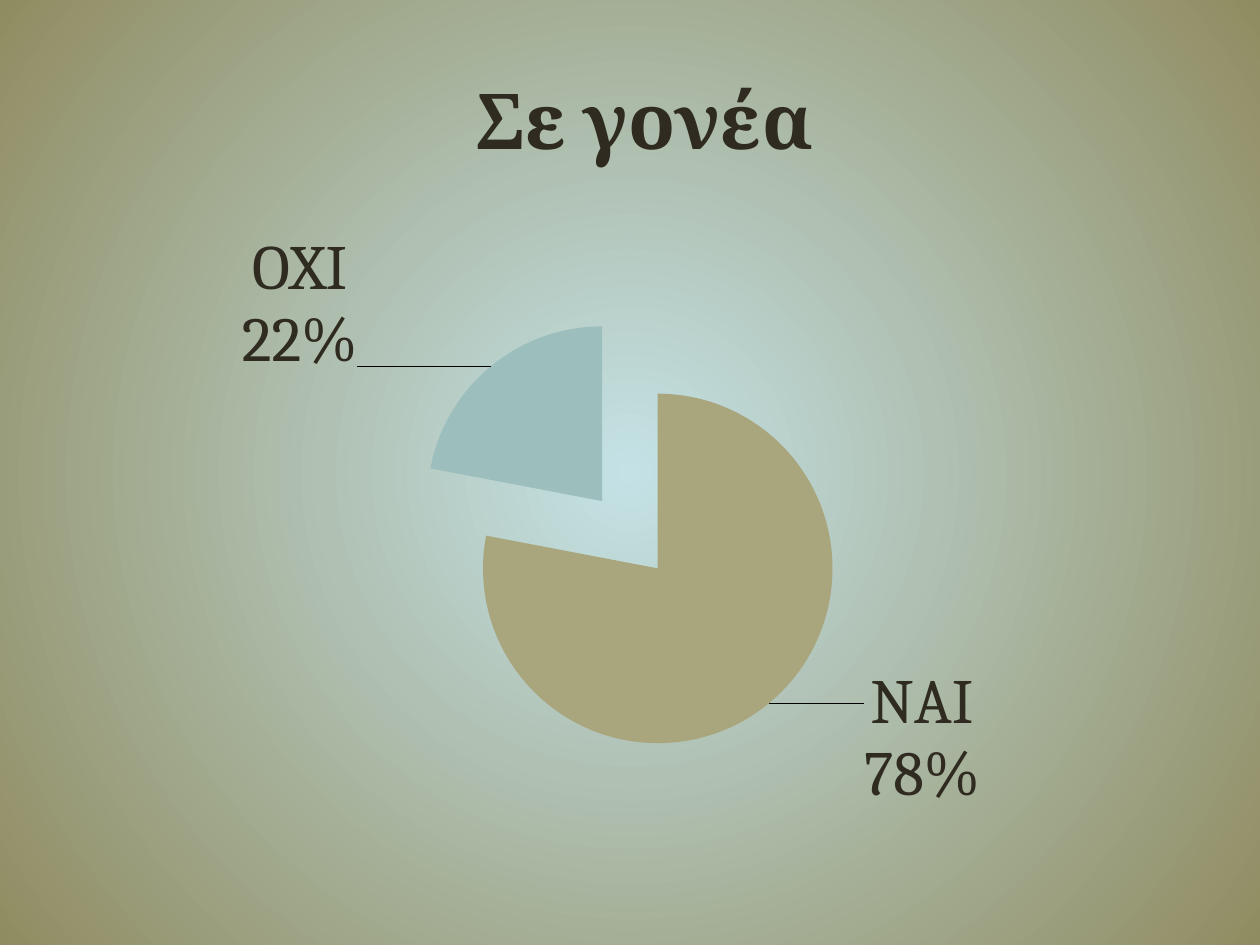
from lxml import etree
from pptx import Presentation
from pptx.chart.data import CategoryChartData
from pptx.dml.color import RGBColor
from pptx.enum.chart import XL_CHART_TYPE, XL_LABEL_POSITION
from pptx.oxml import parse_xml
from pptx.oxml.ns import nsdecls, qn
from pptx.util import Inches, Pt

# Content
TITLE = "Σε γονέα"
COLORS = {"text": "2F2B20", "center": "C4E2E6", "edge": "908C61",
          "yes": "A9A57C", "no": "9CBEBD"}
# answer, percent, colour, label shift as a share of the chart size
ANSWERS = [("NAI", 78, "yes", (0.07, -0.05)),
           ("OXI", 22, "no", (-0.1, 0.02))]
TITLE_AT = {"x": 0.37, "y": 0}
PIE_AREA = {"x": 0.33, "y": 0.31, "w": 0.34, "h": 0.53}
EXPLOSION = 25


def set_font(font, size, name="Cambria", bold=False):
    font.size, font.name, font.bold = Pt(size), name, bold
    font.color.rgb = RGBColor.from_string(COLORS["text"])


def layout(values, inner=False, edge=False):
    target = '<c:layoutTarget val="inner"/>' if inner else ""
    modes = '<c:xMode val="edge"/><c:yMode val="edge"/>' if edge else ""
    parts = "".join(f'<c:{k} val="{v}"/>' for k, v in values.items())
    return parse_xml(f'<c:layout {nsdecls("c")}><c:manualLayout>{target}{modes}'
                     f'{parts}</c:manualLayout></c:layout>')


def show_category_and_percent(element):
    for tag, val in (("showVal", 0), ("showLegendKey", 0), ("showCatName", 1),
                     ("showSerName", 0), ("showPercent", 1)):
        element.find(qn(f"c:{tag}")).set("val", str(val))
    separator = etree.Element(qn("c:separator"))
    separator.text = "\n"
    last = element.find(qn("c:showBubbleSize"))
    if last is None:
        last = element.find(qn("c:showPercent"))
    last.addnext(separator)


prs = Presentation()
prs.slide_width, prs.slide_height = Inches(10), Inches(7.5)
s = prs.slides.add_slide(prs.slide_layouts[6])

# Radial background
s.background.fill.gradient()
grad = s.background.fill._xPr.find(qn("a:gradFill"))
grad.getparent().replace(grad, parse_xml(
    f'<a:gradFill {nsdecls("a")} rotWithShape="1"><a:gsLst>'
    f'<a:gs pos="0"><a:srgbClr val="{COLORS["center"]}"/></a:gs>'
    f'<a:gs pos="100000"><a:srgbClr val="{COLORS["edge"]}"/></a:gs></a:gsLst>'
    '<a:path path="circle"><a:fillToRect l="50000" t="50000" r="50000" b="50000"/>'
    '</a:path></a:gradFill>'))

# Pie chart
data = CategoryChartData()
data.categories = [a[0] for a in ANSWERS]
data.add_series("Series 1", [a[1] for a in ANSWERS])
chart = s.shapes.add_chart(XL_CHART_TYPE.PIE, Inches(-0.1), Inches(0.45),
                           Inches(10.2), Inches(6.6), data).chart
set_font(chart.font, 10, "Roboto")
chart.has_legend = False

# Title at the top edge
chart.has_title = True
tf = chart.chart_title.text_frame
tf.text = TITLE
set_font(tf.paragraphs[0].runs[0].font, 44, bold=True)
title = chart.chart_title._element
for old in title.findall(qn("c:layout")):
    title.remove(old)
title.find(qn("c:tx")).addnext(layout(TITLE_AT, edge=True))

plot_area = chart._chartSpace.chart.plotArea
for old in plot_area.findall(qn("c:layout")):
    plot_area.remove(old)
plot_area.insert(0, layout(PIE_AREA, inner=True, edge=True))

plot = chart.plots[0]
plot.vary_by_categories = True
series = plot.series[0]

# Labels with leader lines
labels = series.data_labels
set_font(labels.font, 36)
labels.position = XL_LABEL_POSITION.OUTSIDE_END
show_category_and_percent(labels._element)
leader = labels._element.find(qn("c:showLeaderLines"))
if leader is None:
    leader = etree.SubElement(labels._element, qn("c:showLeaderLines"))
leader.set("val", "1")

# Slices
for i, (_, _, color, (dx, dy)) in enumerate(ANSWERS):
    point = series.points[i]
    point.format.fill.solid()
    point.format.fill.fore_color.rgb = RGBColor.from_string(COLORS[color])
    point.format.line.fill.background()
    label = point.data_label
    set_font(label.font, 36)
    label.position = XL_LABEL_POSITION.OUTSIDE_END
    d_lbl = labels._element.findall(qn("c:dLbl"))[i]
    d_lbl.find(qn("c:idx")).addnext(layout({"x": dx, "y": dy}))
    show_category_and_percent(d_lbl)

# Pull the slices apart
explosion = etree.Element(qn("c:explosion"))
explosion.set("val", str(EXPLOSION))
series._element.find(qn("c:dPt")).addprevious(explosion)

prs.save("out.pptx")
